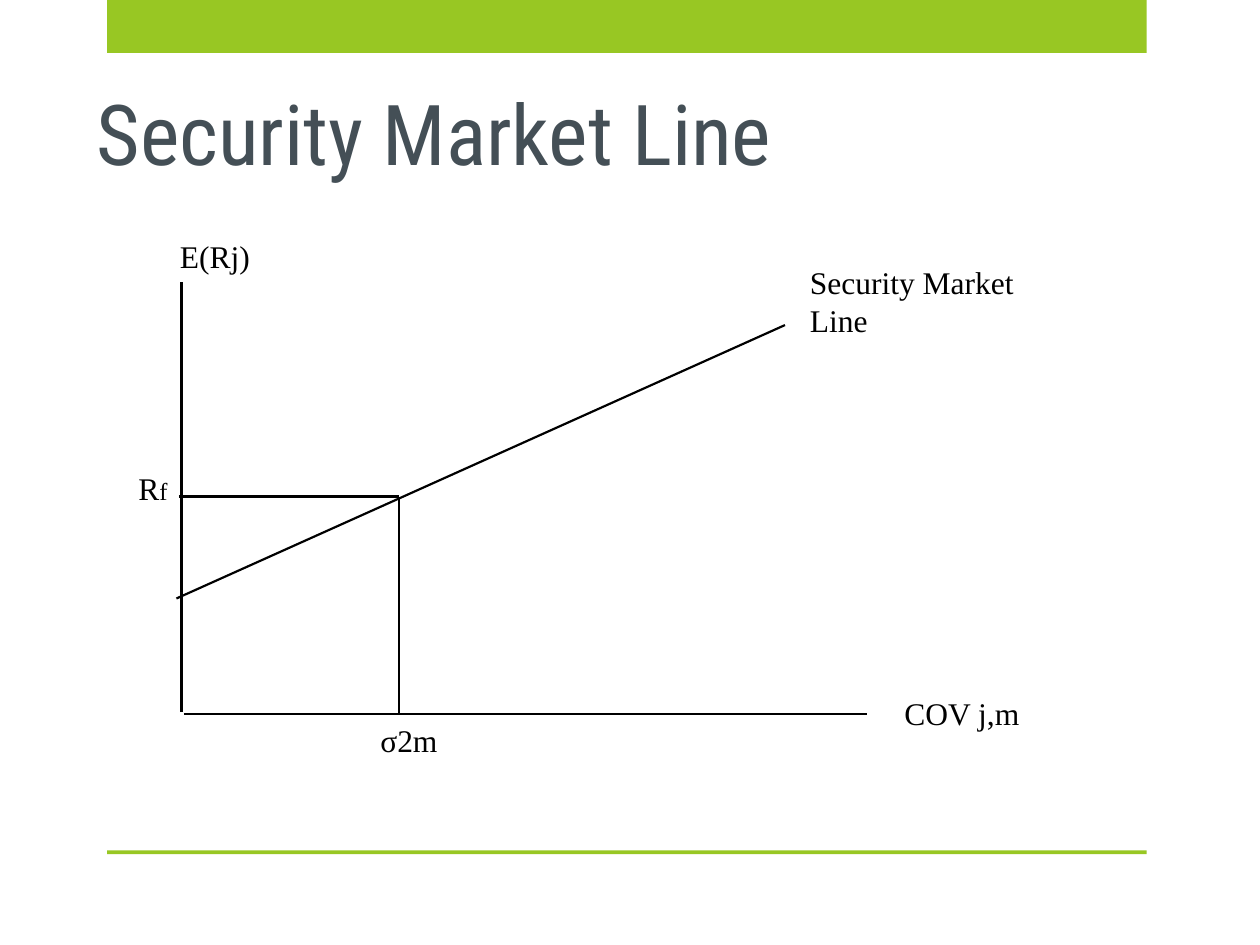
from dataclasses import dataclass

from lxml import etree
from pptx import Presentation
from pptx.dml.color import RGBColor
from pptx.enum import shapes, text
from pptx.oxml.ns import qn
from pptx.util import Inches, Pt


@dataclass(frozen=True)
class Theme:
    green: RGBColor = RGBColor(0x98, 0xC7, 0x23)
    slate: RGBColor = RGBColor(0x44, 0x4F, 0x56)
    black: RGBColor = RGBColor(0, 0, 0)
    head: str = "Roboto Condensed"
    body: str = "Times New Roman"
    title: Pt = Pt(48)
    label: Pt = Pt(18)
    sub: Pt = Pt(14)
    line: Pt = Pt(1.25)


@dataclass(frozen=True)
class Bar:
    top: float
    height: float


@dataclass(frozen=True)
class Line:
    x1: float
    y1: float
    x2: float
    y2: float


@dataclass(frozen=True)
class Label:
    words: str
    left: float
    top: float
    width: float
    height: float = 0.4
    sub: str = ""


THEME = Theme()
BARS = [Bar(0, 0.42), Bar(6.75, 0.03)]

BASE = 5.67  # height of the horizontal axis
MARKET = 3.17  # market variance on the horizontal axis
LINES = [
    Line(1.44, 2.24, 1.44, 5.65),
    Line(1.46, BASE, 6.88, BASE),
    Line(1.4, 4.75, 6.23, 2.58),
    Line(1.42, 3.94, MARKET, 3.94),
    Line(MARKET, 3.96, MARKET, BASE),
]
LABELS = [
    Label("E(Rj)", 1.33, 1.83, 1.25),
    Label("Security Market Line", 6.33, 2.04, 2.3, 0.71),
    Label("COV j,m", 7.08, 5.46, 1.83),
    Label("σ2m", 2.92, BASE, 1),
    Label("R", 1, 3.67, 0.5, sub="f"),
]


def draw_bar(slide, bar: Bar) -> None:
    shape = slide.shapes.add_shape(
        shapes.MSO_SHAPE.RECTANGLE,
        Inches(0.85), Inches(bar.top), Inches(8.25), Inches(bar.height))
    shape.shadow.inherit = False
    shape.fill.solid()
    shape.fill.fore_color.rgb = THEME.green
    shape.line.fill.background()


def draw_line(slide, line: Line) -> None:
    link = slide.shapes.add_connector(
        shapes.MSO_CONNECTOR.STRAIGHT,
        Inches(line.x1), Inches(line.y1), Inches(line.x2), Inches(line.y2))
    link.line.color.rgb = THEME.black
    link.line.width = THEME.line
    etree.SubElement(link._element.spPr, qn("a:effectLst"))


def draw_text(slide, label: Label, face: str, size: Pt, color: RGBColor,
              anchor=text.MSO_ANCHOR.TOP) -> None:
    box = slide.shapes.add_textbox(
        Inches(label.left), Inches(label.top),
        Inches(label.width), Inches(label.height))
    frame = box.text_frame
    frame.word_wrap = True
    frame.vertical_anchor = anchor
    para = frame.paragraphs[0]
    para.font.name = face
    para.font.size = size
    para.font.color.rgb = color
    para.add_run().text = label.words
    if label.sub:
        run = para.add_run()
        run.text = label.sub
        run.font.size = THEME.sub


def main() -> None:
    deck = Presentation()
    deck.slide_width, deck.slide_height = Inches(10), Inches(7.5)
    slide = deck.slides.add_slide(deck.slide_layouts[6])
    for bar in BARS:
        draw_bar(slide, bar)
    title = Label("Security Market Line", 0.67, 0.42, 8.08, 1.08)
    draw_text(slide, title, THEME.head, THEME.title, THEME.slate,
              text.MSO_ANCHOR.BOTTOM)
    for line in LINES:
        draw_line(slide, line)
    for label in LABELS:
        draw_text(slide, label, THEME.body, THEME.label, THEME.black)
    deck.save("out.pptx")


if __name__ == "__main__":
    main()
